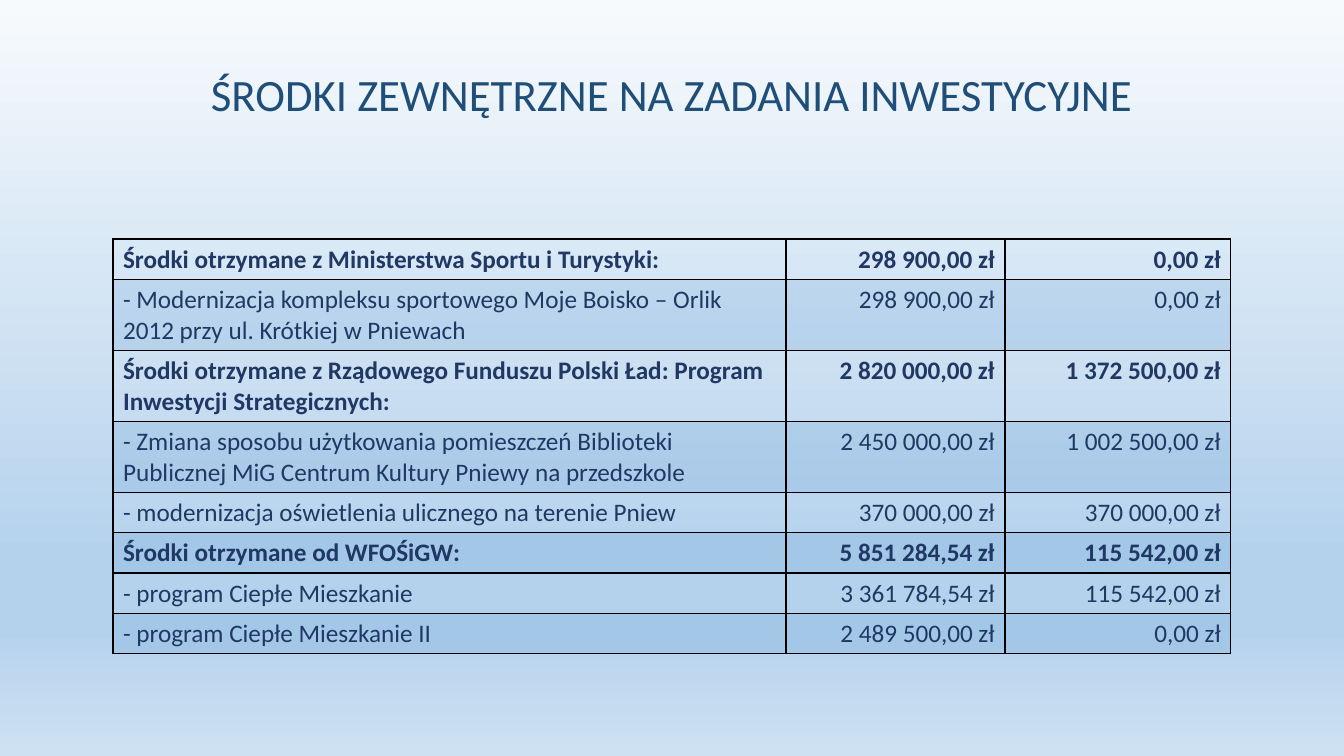
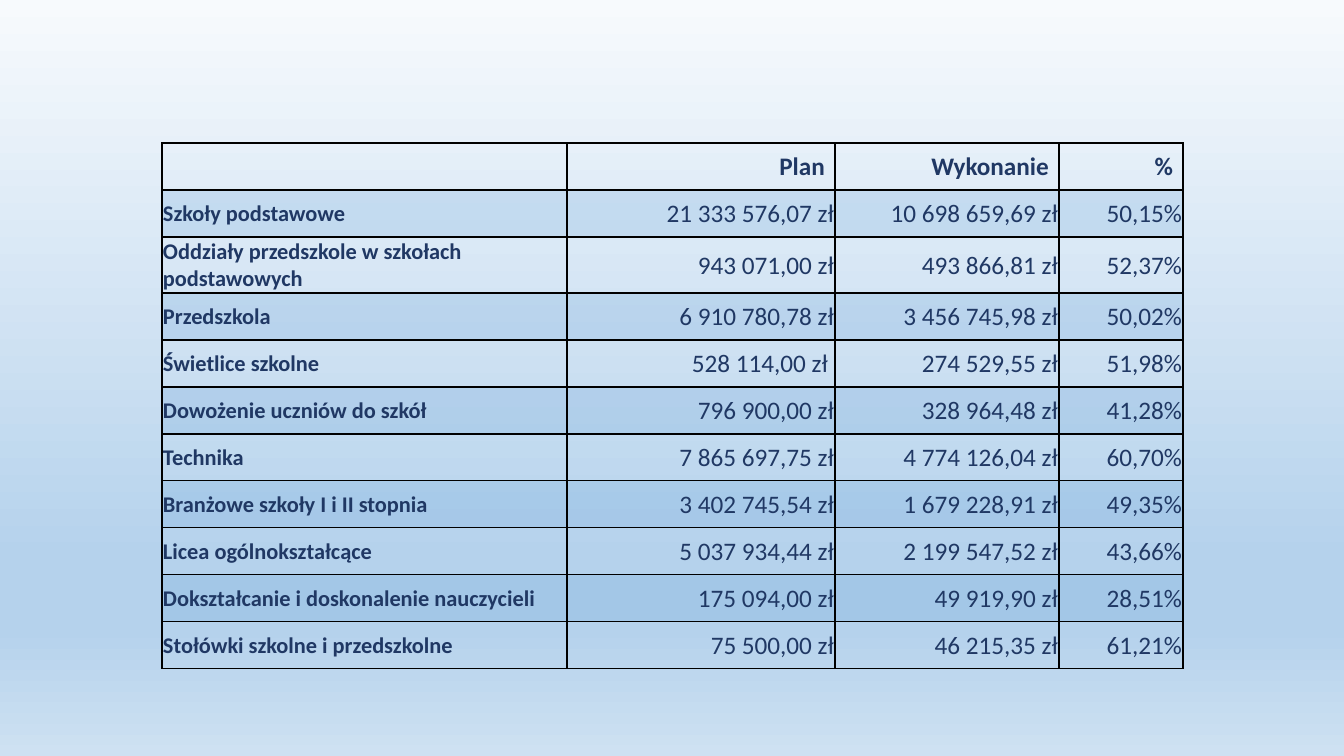
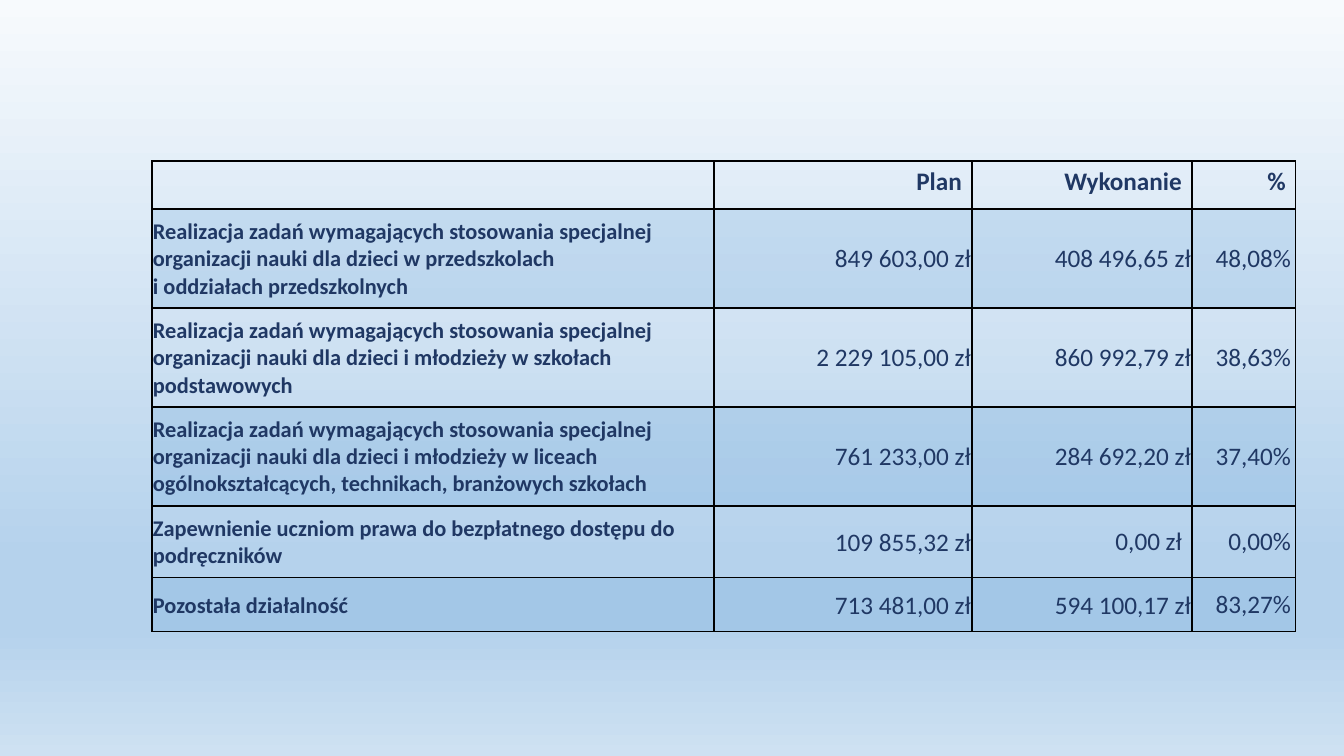
from lxml.etree import SubElement as Sub
from pptx import Presentation
from pptx.dml.color import RGBColor
from pptx.enum.text import MSO_ANCHOR as Anchor, PP_ALIGN as Align
from pptx.oxml.ns import qn
from pptx.util import Pt

SCALE = 12192000 / 1344
FONT = "Calibri"
TITLE = "1F4E79"
INK = "203864"
LINE = "000000"
BAND = "5B9BD5"
SKY = [(0, "F7FAFD"), (74, "B5D2EC"), (83, "B5D2EC"), (100, "CEE1F2")]


def px(n):
    """Turn px into EMU."""
    return round(n * SCALE)


def rgb(code):
    """Turn a hex string into a colour."""
    return RGBColor.from_string(code)


class Deck:
    """Holds the shared style and the current slide."""

    def __init__(self):
        """Set the slide size and the shared sky background."""
        self.prs = Presentation()
        self.prs.slide_width, self.prs.slide_height = px(1344), px(756)
        master = self.prs.slide_master
        fill = master.background.fill
        fill.gradient()
        fill.gradient_angle = 270
        stops = master.element.find(".//" + qn("a:gsLst"))
        for stop in list(stops):
            stops.remove(stop)
        for place, code in SKY:
            stop = Sub(stops, qn("a:gs"), pos=str(place * 1000))
            Sub(stop, qn("a:srgbClr"), val=code)

    def new(self):
        """Start a blank slide."""
        self.slide = self.prs.slides.add_slide(self.prs.slide_layouts[6])

    def style(self, para, size, bold=False, code=INK):
        """Set the font of a paragraph."""
        font = para.font
        font.name, font.size, font.bold = FONT, Pt(size), bold
        font.color.rgb = rgb(code)

    def title(self, text):
        """Add the centred slide title."""
        box = self.slide.shapes.add_textbox(px(132), px(21), px(1080), px(146))
        frame = box.text_frame
        frame.word_wrap = True
        frame.vertical_anchor = Anchor.MIDDLE
        para = frame.paragraphs[0]
        para.text, para.alignment = text, Align.CENTER
        self.style(para, 32, code=TITLE)

    def paint(self, cell, band):
        """Draw the cell borders and the fill of banded rows."""
        props = cell._tc.get_or_add_tcPr()
        for side in ("L", "R", "T", "B"):
            line = Sub(props, qn("a:ln" + side), w=str(Pt(1)))
            Sub(Sub(line, qn("a:solidFill")), qn("a:srgbClr"), val=LINE)
        if band:
            cell.fill.solid()
            cell.fill.fore_color.rgb = rgb(BAND)
            Sub(props.find(qn("a:solidFill"))[0], qn("a:alpha"), val="20000")
        else:
            cell.fill.background()

    def pad(self, cell, left, top, right, low):
        """Set the cell margins."""
        cell.margin_left, cell.margin_top = px(left), px(top)
        cell.margin_right, cell.margin_bottom = px(right), px(low)

    def table(self, left, top, cols, highs, rows, bolds):
        """Add a banded grid with bold rows and right-set figures."""
        frame = self.slide.shapes.add_table(
            len(rows), len(cols), px(left), px(top), px(sum(cols)), px(sum(highs)))
        grid = frame.table
        grid.first_row = grid.horz_banding = False
        for col, wide in zip(grid.columns, cols):
            col.width = px(wide)
        for r, row in enumerate(rows):
            grid.rows[r].height = px(highs[r])
            for c, text in enumerate(row):
                cell = grid.cell(r, c)
                self.paint(cell, r % 2)
                para = cell.text_frame.paragraphs[0]
                para.text = text
                para.alignment = Align.RIGHT if c else Align.LEFT
                self.style(para, 18, r in bolds)
        return grid

    def report(self, left, top, cols, highs, rows):
        """Add a plan table with a header row and tight cells."""
        head = ("", "Plan", "Wykonanie", "%")
        grid = self.table(left, top, cols, highs, [head, *rows], {0})
        for r in range(1, len(highs)):
            self.style(grid.cell(r, 0).text_frame.paragraphs[0], 16, True)
            for c in range(len(cols)):
                cell = grid.cell(r, c)
                cell.vertical_anchor = Anchor.MIDDLE
                self.pad(cell, 1, 1, 1, 0)
        return grid


FUNDS = [
    ("Środki otrzymane z Ministerstwa Sportu i Turystyki:", "298 900,00 zł", "0,00 zł"),
    ("- Modernizacja kompleksu sportowego Moje Boisko – Orlik 2012 przy ul. Krótkiej w Pniewach",
     "298 900,00 zł", "0,00 zł"),
    ("Środki otrzymane z Rządowego Funduszu Polski Ład: Program Inwestycji Strategicznych:",
     "2 820 000,00 zł", "1 372 500,00 zł"),
    ("- Zmiana sposobu użytkowania pomieszczeń Biblioteki Publicznej MiG Centrum Kultury Pniewy "
     "na przedszkole", "2 450 000,00 zł", "1 002 500,00 zł"),
    ("- modernizacja oświetlenia ulicznego na terenie Pniew", "370 000,00 zł", "370 000,00 zł"),
    ("Środki otrzymane od WFOŚiGW:", "5 851 284,54 zł", "115 542,00 zł"),
    ("- program Ciepłe Mieszkanie", "3 361 784,54 zł", "115 542,00 zł"),
    ("- program Ciepłe Mieszkanie II", "2 489 500,00 zł", "0,00 zł"),
]
SCHOOLS = [
    ("Szkoły podstawowe", "21 333 576,07 zł", "10 698 659,69 zł", "50,15%"),
    ("Oddziały przedszkole w szkołach podstawowych", "943 071,00 zł", "493 866,81 zł", "52,37%"),
    ("Przedszkola", "6 910 780,78 zł", "3 456 745,98 zł", "50,02%"),
    ("Świetlice szkolne", "528 114,00 zł", "274 529,55 zł", "51,98%"),
    ("Dowożenie uczniów do szkół", "796 900,00 zł", "328 964,48 zł", "41,28%"),
    ("Technika", "7 865 697,75 zł", "4 774 126,04 zł", "60,70%"),
    ("Branżowe szkoły I i II stopnia", "3 402 745,54 zł", "1 679 228,91 zł", "49,35%"),
    ("Licea ogólnokształcące", "5 037 934,44 zł", "2 199 547,52 zł", "43,66%"),
    ("Dokształcanie i doskonalenie nauczycieli", "175 094,00 zł", "49 919,90 zł", "28,51%"),
    ("Stołówki szkolne i przedszkolne", "75 500,00 zł", "46 215,35 zł", "61,21%"),
]
NEEDS = "Realizacja zadań wymagających stosowania specjalnej organizacji nauki dla dzieci "
TASKS = [
    (NEEDS + "w przedszkolach\vi oddziałach przedszkolnych",
     "849 603,00 zł", "408 496,65 zł", "48,08%"),
    (NEEDS + "i młodzieży w szkołach podstawowych",
     "2 229 105,00 zł", "860 992,79 zł", "38,63%"),
    (NEEDS + "i młodzieży w liceach ogólnokształcących, technikach, branżowych szkołach",
     "761 233,00 zł", "284 692,20 zł", "37,40%"),
    ("Zapewnienie uczniom prawa do bezpłatnego dostępu do podręczników",
     "109 855,32 zł", "0,00 zł", "0,00%"),
    ("Pozostała działalność", "713 481,00 zł", "594 100,17 zł", "83,27%"),
]


def main():
    """Build the three slides and save them."""
    deck = Deck()

    deck.new()
    deck.title("ŚRODKI ZEWNĘTRZNE NA ZADANIA INWESTYCYJNE")
    deck.table(113, 239, [673, 219, 226], [40, 71, 71, 71, 40, 40, 40, 40], FUNDS, {0, 2, 5})

    deck.new()
    grid = deck.report(162, 143, [405, 268, 224, 124], [47, 47, 56] + [47] * 8, SCHOOLS)
    for cell in grid.rows[0].cells:
        cell.vertical_anchor = Anchor.MIDDLE
    deck.pad(grid.cell(4, 1), 1, 1, 7, 0)

    deck.new()
    grid = deck.report(152, 161, [562, 258, 220, 104], [48, 99, 99, 99, 72, 54], TASKS)
    for r in range(1, 6):
        deck.pad(grid.cell(r, 3), 5, 5, 5, 5)
    deck.pad(grid.cell(4, 2), 10, 5, 10, 5)

    deck.prs.save("out.pptx")


if __name__ == "__main__":
    main()
